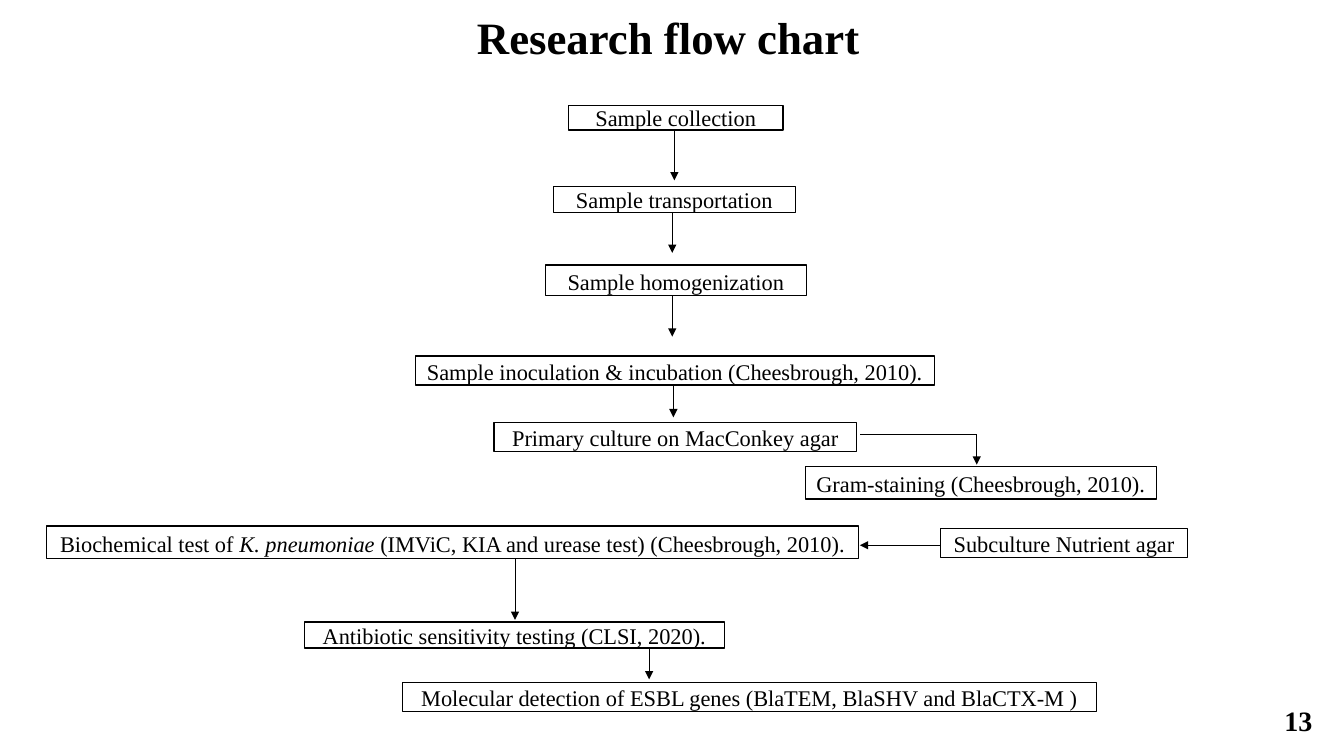
import pptx
import pptx.util
import pptx.dml.color
import pptx.enum.shapes
import pptx.enum.text
import pptx.oxml.ns
import lxml.etree

Pt = pptx.util.Pt
BLACK = pptx.dml.color.RGBColor(0x00, 0x00, 0x00)
WHITE = pptx.dml.color.RGBColor(0xFF, 0xFF, 0xFF)
ALIGN = pptx.enum.text.PP_ALIGN
TITLE_FONT = {"name": "Times New Roman", "size": Pt(32), "bold": True}
NUMBER_FONT = {"name": "Times New Roman", "size": Pt(20), "bold": True}
STEP_FONT = {"name": "Times New Roman", "size": Pt(16)}
TIGHT = {"alignment": ALIGN.CENTER}
SPACED = {"alignment": ALIGN.CENTER, "line_spacing": 1.07, "space_after": Pt(8)}


def write(shape, pieces, font_format, para_format):
    """Fill a shape with one paragraph; every second piece is italic."""
    frame = shape.text_frame
    frame.word_wrap = True
    frame.vertical_anchor = pptx.enum.text.MSO_ANCHOR.MIDDLE
    para = frame.paragraphs[0]
    for key, value in para_format.items():
        setattr(para, key, value)
    for index, piece in enumerate(pieces):
        span = para.add_run()
        span.text = piece
        for key, value in font_format.items():
            setattr(span.font, key, value)
        span.font.color.rgb = BLACK
        if index % 2:
            span.font.italic = True


deck = pptx.Presentation()
deck.slide_width, deck.slide_height = Pt(960), Pt(540)
page = deck.slides.add_slide(deck.slide_layouts[5])

# Title
title = page.shapes.title
title.left, title.top, title.width, title.height = Pt(63.4), Pt(7.9), Pt(828), Pt(41.8)
write(title, ["Research flow chart"], TITLE_FONT,
      {"alignment": ALIGN.CENTER, "line_spacing": 0.9})

# Arrows between steps: start x, start y, end x, end y, has head
arrows = [
    (481.7, 92.9, 481.7, 128.9, True),
    (480.2, 151.9, 480.2, 180.7, True),
    (480.2, 211.7, 480.2, 240.5, True),
    (481, 269.3, 481, 298.1, True),
    (697.7, 310.3, 614.2, 310.3, False),
    (697.7, 310.3, 697.7, 331.9, True),
    (671.8, 389.5, 614.2, 389.5, True),
    (367.9, 399.6, 367.9, 442.8, True),
    (463.7, 463.7, 463.7, 485.3, True),
]
for start_x, start_y, end_x, end_y, has_head in arrows:
    arrow = page.shapes.add_connector(
        pptx.enum.shapes.MSO_CONNECTOR.STRAIGHT,
        Pt(start_x), Pt(start_y), Pt(end_x), Pt(end_y))
    arrow.line.color.rgb = BLACK
    arrow.line.width = Pt(0.5)
    if has_head:
        lxml.etree.SubElement(arrow.line._get_or_add_ln(),
                              pptx.oxml.ns.qn("a:tailEnd"), type="triangle")
    lxml.etree.SubElement(arrow._element.spPr, pptx.oxml.ns.qn("a:effectLst"))

# Step boxes: left, top, width, height, paragraph format, text pieces
steps = [
    (406, 75.6, 153.4, 17.3, TIGHT, ["Sample collection"]),
    (395.3, 133.2, 172.8, 18.7, TIGHT, ["Sample transportation"]),
    (389.5, 189.4, 186.5, 21.6, SPACED, ["Sample homogenization"]),
    (296.6, 254.2, 370.8, 20.9, SPACED,
     ["Sample inoculation & incubation (Cheesbrough, 2010)."]),
    (352.8, 301.7, 259.2, 20.9, SPACED, ["Primary culture on MacConkey agar"]),
    (575.3, 333.4, 250.6, 23, SPACED, ["Gram-staining (Cheesbrough, 2010)."]),
    (671.8, 377.3, 176.4, 20.9, SPACED, ["Subculture Nutrient agar"]),
    (33.1, 375.8, 580.3, 23, SPACED,
     ["Biochemical test of ", "K. pneumoniae",
      " (IMViC, KIA and urease test) (Cheesbrough, 2010)."]),
    (217.4, 444.2, 300.2, 18.7, SPACED,
     ["Antibiotic sensitivity testing (CLSI, 2020)."]),
    (287.3, 487.4, 496.1, 20.9, SPACED,
     ["Molecular detection of ESBL genes (BlaTEM, BlaSHV and BlaCTX-M )"]),
]
for left, top, width, height, para_format, pieces in steps:
    box = page.shapes.add_shape(pptx.enum.shapes.MSO_SHAPE.RECTANGLE,
                                Pt(left), Pt(top), Pt(width), Pt(height))
    box.shadow.inherit = False
    box.fill.solid()
    box.fill.fore_color.rgb = WHITE
    box.line.color.rgb = BLACK
    box.line.width = Pt(1)
    write(box, pieces, STEP_FONT, para_format)

# Page number
number = page.shapes.add_textbox(Pt(903.6), Pt(500.4), Pt(41), Pt(28.8))
write(number, ["13"], NUMBER_FONT, {"alignment": ALIGN.RIGHT})

deck.save("out.pptx")
